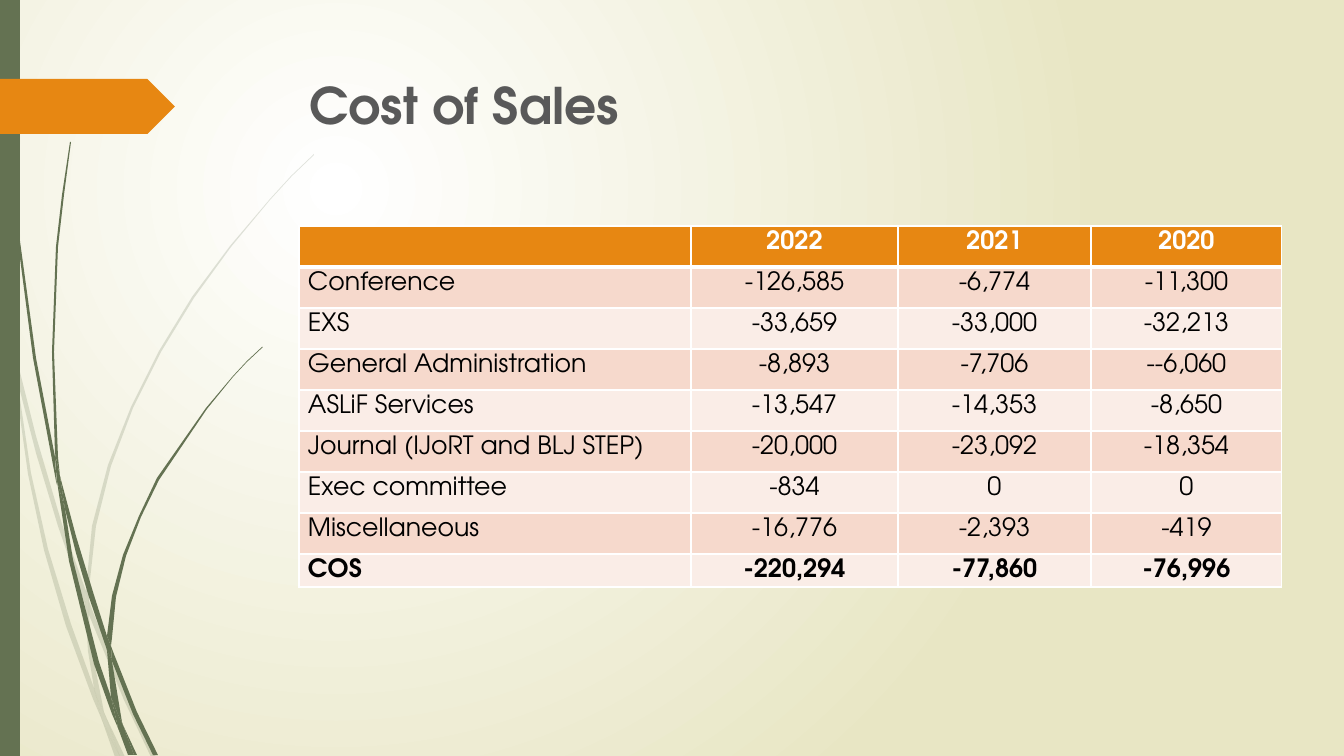
from lxml import etree
from pptx import Presentation
from pptx.dml.color import RGBColor
from pptx.enum.shapes import MSO_SHAPE
from pptx.enum.text import MSO_ANCHOR, PP_ALIGN
from pptx.oxml.ns import qn
from pptx.util import Pt

PX = 914400 / 100.8
FONT = "TeX Gyre Adventor"
RECT, PENTAGON = MSO_SHAPE.RECTANGLE, MSO_SHAPE.PENTAGON
LEFT, CENTER, TOP = PP_ALIGN.LEFT, PP_ALIGN.CENTER, MSO_ANCHOR.TOP

WHITE = RGBColor(0xFF, 0xFF, 0xFF)
BLACK = RGBColor(0x00, 0x00, 0x00)
GREY = RGBColor(0x59, 0x59, 0x59)
CREAM = RGBColor(0xE8, 0xE6, 0xC4)
GREEN = RGBColor(0x64, 0x72, 0x52)
ORANGE = RGBColor(0xE7, 0x87, 0x12)
BANDS = RGBColor(0xFA, 0xED, 0xE7), RGBColor(0xF6, 0xD9, 0xCC)

# Corner points of the grass pieces
PALE_GRASS = [
    [(11, 353), (9, 325), (0, 284), (0, 301), (10, 347)],
    [(58, 526), (85, 604), (86, 591), (62, 524), (36, 436), (14, 348),
     (17, 379), (36, 453)],
    [(93, 612), (89, 601), (89, 615), (124, 700), (151, 757), (156, 757),
     (128, 698)],
    [(120, 757), (125, 757), (106, 717)],
    [(94, 688), (71, 624), (48, 549), (31, 473), (17, 379), (11, 353),
     (28, 474), (44, 550), (66, 626), (93, 699), (102, 720), (100, 713)],
    [(85, 604), (88, 651), (94, 688), (97, 698), (106, 717), (104, 712),
     (92, 651), (89, 615), (89, 613)],
    [(89, 589), (96, 526), (111, 466), (133, 408), (161, 352), (194, 298),
     (231, 247), (270, 200), (292, 176), (314, 155), (314, 154), (291, 176),
     (270, 199), (230, 246), (192, 297), (159, 351), (131, 407), (108, 465),
     (92, 526), (86, 589), (86, 591), (89, 601)],
    [(102, 720), (115, 757), (120, 757)],
    [(89, 613), (89, 615), (89, 601), (86, 591), (85, 604)],
    [(97, 698), (94, 688), (100, 713), (102, 720), (120, 757), (106, 717)],
]
DARK_GRASS = [
    [(7, 111), (17, 235), (33, 358), (56, 481), (57, 485), (55, 461), (55, 457),
     (36, 358), (19, 234), (8, 110), (5, 48), (4, 0), (3, 0), (4, 48)],
    [(89, 597), (107, 650), (107, 636), (94, 595), (76, 536), (60, 476),
     (65, 509), (76, 553)],
    [(114, 654), (111, 646), (112, 661), (133, 714), (153, 755), (158, 755),
     (137, 712)],
    [(111, 697), (99, 662), (73, 560), (65, 509), (57, 481), (69, 561),
     (94, 664), (112, 714), (118, 728), (117, 723)],
    [(60, 476), (58, 457), (54, 352), (58, 247), (64, 195), (71, 142),
     (70, 142), (62, 195), (56, 247), (52, 352), (55, 453)],
    [(134, 755), (137, 755), (123, 725)],
    [(57, 481), (65, 509), (60, 476), (55, 453), (55, 457)],
    [(112, 638), (116, 597), (126, 556), (141, 517), (159, 480), (207, 409),
     (233, 377), (247, 362), (263, 347), (262, 347), (247, 361), (233, 376),
     (206, 408), (157, 478), (139, 516), (123, 555), (112, 596), (107, 636),
     (111, 646)],
    [(118, 728), (128, 755), (132, 755)],
    [(107, 650), (111, 697), (117, 712), (123, 725), (122, 722), (112, 661),
     (110, 656)],
    [(107, 650), (110, 656), (112, 661), (111, 646), (107, 636)],
    [(117, 712), (111, 697), (117, 723), (118, 728), (131, 755), (134, 755),
     (123, 725)],
]
COST_ROWS = [
    ("", "2022", "2021", "2020"),
    ("Conference", "-126,585", "-6,774", "-11,300"),
    ("EXS", "-33,659", "-33,000", "-32,213"),
    ("General Administration", "-8,893", "-7,706", "--6,060"),
    ("ASLiF Services", "-13,547", "-14,353", "-8,650"),
    ("Journal (IJoRT and BLJ STEP)", "-20,000", "-23,092", "-18,354"),
    ("Exec committee", "-834", "0", "0"),
    ("Miscellaneous", "-16,776", "-2,393", "-419"),
    ("COS", "-220,294", "-77,860", "-76,996"),
]


def emu(*lengths):
    return [round(v * PX) for v in lengths]


class Deck:
    def __init__(self, width, height):
        self.prs = Presentation()
        self.prs.slide_width, self.prs.slide_height = emu(width, height)
        self.s = self.prs.slides.add_slide(self.prs.slide_layouts[5])

    def background(self, inner, outer):
        fill = self.s.background.fill
        fill.gradient()
        for stop, color in zip(fill.gradient_stops, (inner, outer)):
            stop.color.rgb = color
        grad = self.s.element.find(".//" + qn("a:gradFill"))
        grad.remove(grad.find(qn("a:lin")))
        radial = etree.SubElement(grad, qn("a:path"), path="circle")
        etree.SubElement(radial, qn("a:fillToRect"),
                         l="50000", t="50000", r="100000", b="100000")

    def paint(self, sp, color, alpha=100):
        sp.shadow.inherit = False
        sp.fill.solid()
        sp.fill.fore_color.rgb = color
        sp.line.fill.background()
        if alpha < 100:
            rgb = sp.element.spPr.find(".//" + qn("a:srgbClr"))
            etree.SubElement(rgb, qn("a:alpha"), val=str(alpha * 1000))

    def shape(self, kind, box, color):
        self.paint(self.s.shapes.add_shape(kind, *emu(*box)), color)

    def outline(self, points, color, alpha=100):
        builder = self.s.shapes.build_freeform(*points[0], scale=PX)
        builder.add_line_segments(points[1:], close=True)
        self.paint(builder.convert_to_shape(), color, alpha)

    def text(self, tf, text, size, color, bold, align):
        p = tf.paragraphs[0]
        p.alignment = align
        r = p.add_run()
        r.text = text
        r.font.color.rgb = color
        for name, value in dict(name=FONT, size=Pt(size), bold=bold).items():
            setattr(r.font, name, value)

    def title(self, text, box):
        sp = self.s.shapes.title
        for name, value in zip(("left", "top", "width", "height"), emu(*box)):
            setattr(sp, name, value)
        sp.text_frame.vertical_anchor = TOP
        self.text(sp.text_frame, text, 36, GREY, True, LEFT)

    def borders(self, cell, bottom):
        tc_pr = cell._tc.get_or_add_tcPr()
        for i, (side, width) in enumerate(zip("LRTB", (1, 1, 1, bottom))):
            ln = etree.Element(qn("a:ln" + side), w=str(Pt(width)))
            fill = etree.SubElement(ln, qn("a:solidFill"))
            etree.SubElement(fill, qn("a:srgbClr"), val=str(WHITE))
            tc_pr.insert(i, ln)

    def table(self, rows, at, widths, heights):
        box = emu(*at, sum(widths), sum(heights))
        tbl = self.s.shapes.add_table(len(rows), len(widths), *box).table
        for col, width in zip(tbl.columns, emu(*widths)):
            col.width = width
        for row, height in zip(tbl.rows, emu(*heights)):
            row.height = height
        sides = ("margin_left", "margin_right", "margin_top", "margin_bottom")
        margins = dict(zip(sides, emu(9, 9, 5, 3)))
        for i, row in enumerate(rows):
            header = i == 0
            bold = header or i == len(rows) - 1
            for j, value in enumerate(row):
                cell = tbl.cell(i, j)
                for name, margin in margins.items():
                    setattr(cell, name, margin)
                cell.fill.solid()
                cell.fill.fore_color.rgb = ORANGE if header else BANDS[i % 2]
                self.borders(cell, 3 if header else 1)
                if value:
                    self.text(cell.text_frame, value, 18,
                              WHITE if header else BLACK, bold,
                              CENTER if j else LEFT)


def main():
    deck = Deck(1344, 756)
    deck.background(WHITE, CREAM)

    # Grass, side band and arrow tab
    for points in PALE_GRASS:
        deck.outline(points, GREEN, alpha=20)
    for points in DARK_GRASS:
        deck.outline(points, GREEN)
    deck.shape(RECT, (0, 0, 20, 756), GREEN)
    deck.shape(PENTAGON, (0, 79, 175, 55), ORANGE)

    # Title and cost table
    deck.title("Cost of Sales", (299, 69, 969, 141))
    deck.table(COST_ROWS, (299, 226), (392, 207, 193, 191), [41] * 8 + [33])
    deck.prs.save("out.pptx")


if __name__ == "__main__":
    main()
